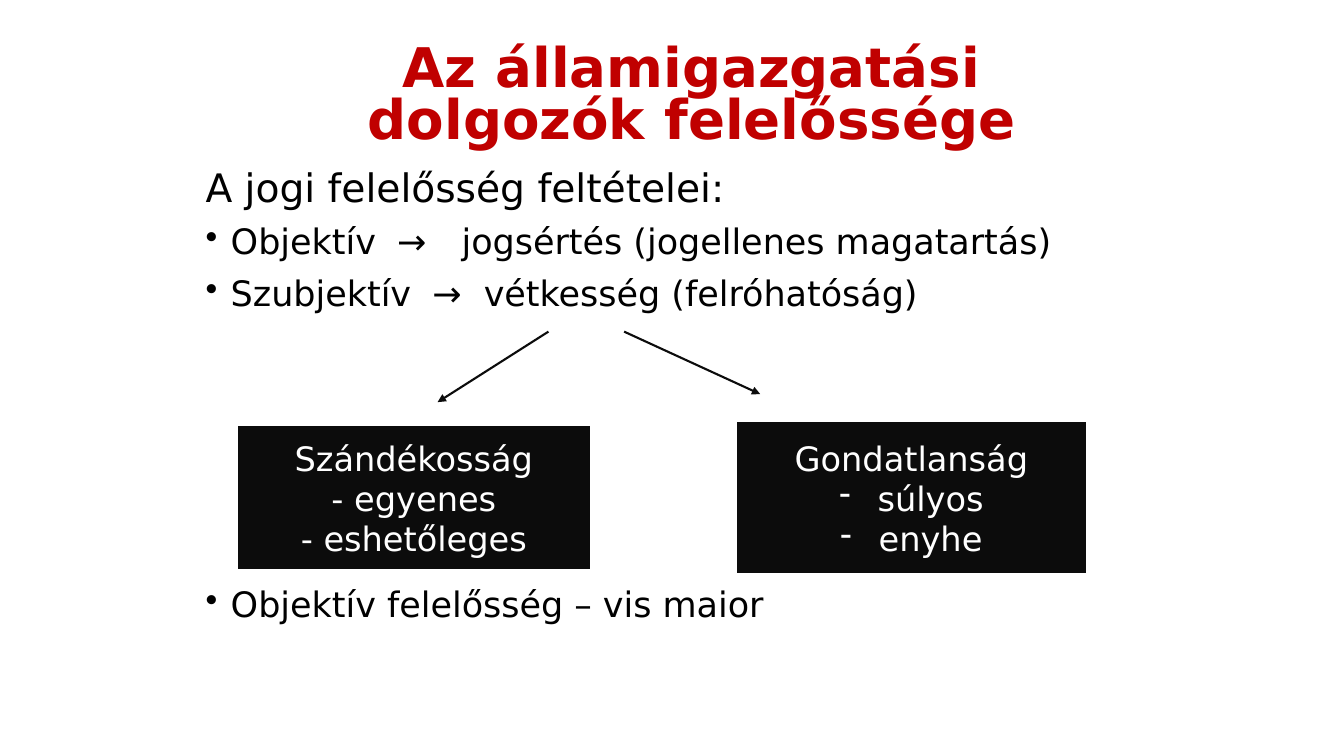
from dataclasses import dataclass

from lxml import etree
from pptx import Presentation
from pptx import util as u
from pptx.dml.color import RGBColor
from pptx.enum import shapes, text
from pptx.oxml.ns import qn


@dataclass(frozen=True)
class Theme:
    font: str = "DejaVu Sans"
    title_color: str = "C00000"
    ink: str = "000000"
    dark: str = "0C0C0C"
    light: str = "FFFFFF"
    title: int = 39
    heading: int = 28
    body: int = 25
    box: int = 24
    line: float = 1.5


T = Theme()


def write(tf, content, *, size, color=T.ink, bold=False, align="LEFT",
          spacing=None, before=0, bullet=None, indent=0, tabs=()):
    """Write one paragraph, using the first one while it is empty."""
    first = tf.paragraphs[0]
    p = tf.add_paragraph() if first.runs else first
    pPr = p._p.get_or_add_pPr()
    if bullet:
        pPr.set("marL", str(u.Inches(indent)))
        pPr.set("indent", str(-u.Inches(indent)))
        etree.SubElement(pPr, qn("a:buChar")).set("char", bullet)
    if tabs:
        stops = etree.SubElement(pPr, qn("a:tabLst"))
        for pos in tabs:
            tab = etree.SubElement(stops, qn("a:tab"))
            tab.set("pos", str(u.Inches(pos)))
            tab.set("algn", "l")
    p.text = content
    p.alignment = getattr(text.PP_ALIGN, align)
    if spacing:
        p.line_spacing = spacing
    if before:
        p.space_before = u.Pt(before)
    for r in p.runs:
        r.font.name, r.font.size, r.font.bold = T.font, u.Pt(size), bold
        r.font.color.rgb = RGBColor.from_string(color)


def text_frame(s, x, y, w, h, anchor="TOP"):
    tf = s.shapes.add_textbox(*map(u.Inches, (x, y, w, h))).text_frame
    tf.word_wrap = True
    tf.vertical_anchor = getattr(text.MSO_ANCHOR, anchor)
    return tf


def add_title(s, x, y, w, h):
    tf = text_frame(s, x, y, w, h, "MIDDLE")
    write(tf, "Az államigazgatási\vdolgozók felelőssége", size=T.title,
          color=T.title_color, bold=True, align="CENTER", spacing=u.Pt(37))


def add_conditions(s, x, y, w, h):
    bullet = dict(size=T.body, spacing=0.9, bullet="•", indent=0.25)
    tf = text_frame(s, x, y, w, h)
    write(tf, "A jogi felelősség feltételei:", size=T.heading, spacing=0.9)
    write(tf, "Objektív\t→\tjogsértés (jogellenes magatartás)",
          before=10, tabs=(1.9, 2.54), **bullet)
    write(tf, "Szubjektív\t→\tvétkesség (felróhatóság)",
          before=10, tabs=(2.25, 2.76), **bullet)
    # Closing bullet below the two boxes
    tf = text_frame(s, x, y + 4.16, w, 0.5)
    write(tf, "Objektív felelősség – vis maior", **bullet)


def add_fault_box(s, x, y, w, h, heading, items, **item_format):
    sp = s.shapes.add_shape(shapes.MSO_SHAPE.RECTANGLE,
                            *map(u.Inches, (x, y, w, h)))
    sp.shadow.inherit = False
    sp.fill.solid()
    sp.fill.fore_color.rgb = RGBColor.from_string(T.dark)
    sp.line.color.rgb = RGBColor.from_string(T.light)
    sp.line.width = u.Pt(T.line)
    tf = sp.text_frame
    tf.word_wrap = True
    tf.vertical_anchor = text.MSO_ANCHOR.MIDDLE
    look = dict(size=T.box, color=T.light, align="CENTER")
    write(tf, heading, **look)
    for item in items:
        write(tf, item, **look, **item_format)


def add_arrow(s, x1, y1, x2, y2):
    c = s.shapes.add_connector(shapes.MSO_CONNECTOR.STRAIGHT,
                               *map(u.Inches, (x1, y1, x2, y2)))
    c.line.color.rgb = RGBColor.from_string(T.dark)
    c.line.width = u.Pt(T.line)
    etree.SubElement(c.line._get_or_add_ln(),
                     qn("a:tailEnd")).set("type", "triangle")
    etree.SubElement(c._element.spPr, qn("a:effectLst"))


def main():
    prs = Presentation()
    prs.slide_width, prs.slide_height = u.Inches(13.33), u.Inches(7.5)
    s = prs.slides.add_slide(prs.slide_layouts[6])

    add_title(s, 1.86, 0.24, 10, 1.47)
    add_conditions(s, 1.94, 1.62, 9.29, 1.6)

    # The two forms of fault
    add_fault_box(s, 2.35, 4.22, 3.51, 1.44, "Szándékosság",
                  ("- egyenes", "- eshetőleges"))
    add_fault_box(s, 7.3, 4.18, 3.48, 1.52, "Gondatlanság",
                  ("súlyos", "enyhe"), bullet="-", indent=0.38)
    add_arrow(s, 5.44, 3.29, 4.34, 3.99)
    add_arrow(s, 6.19, 3.29, 7.54, 3.91)

    prs.save("out.pptx")


if __name__ == "__main__":
    main()
